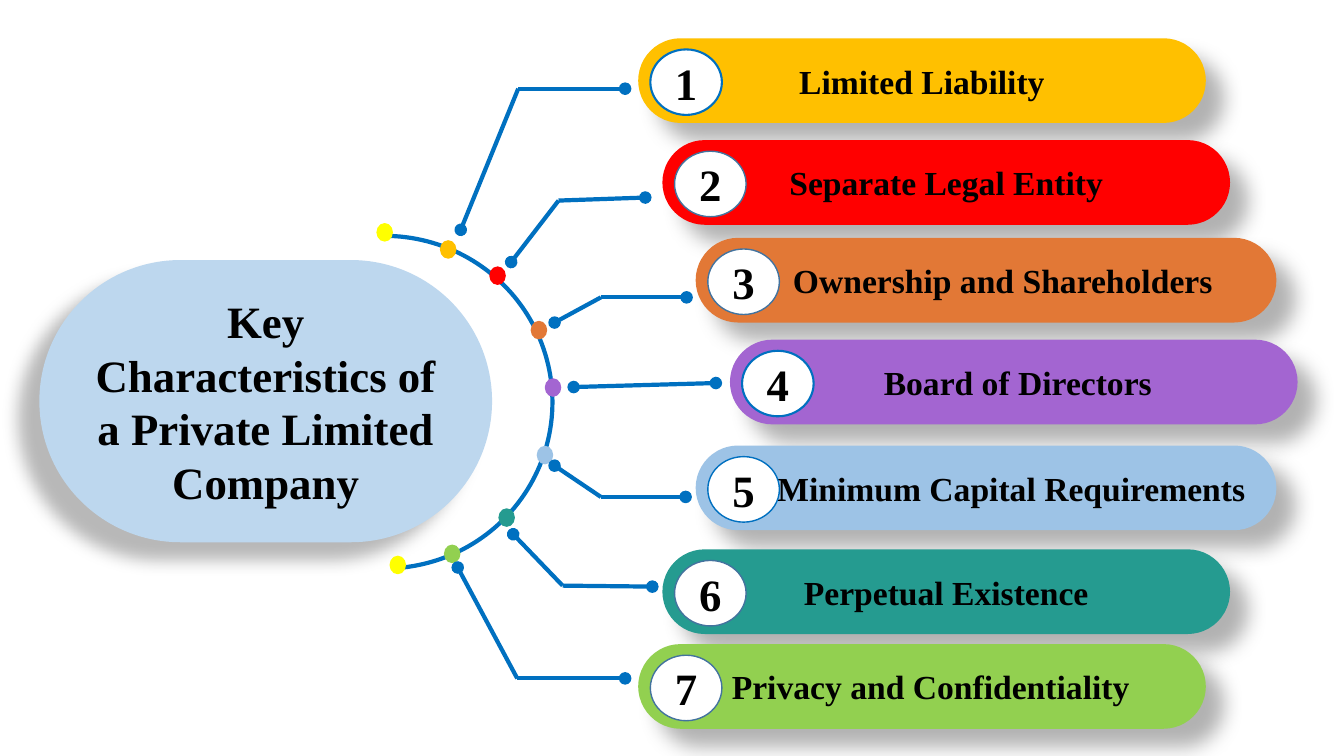
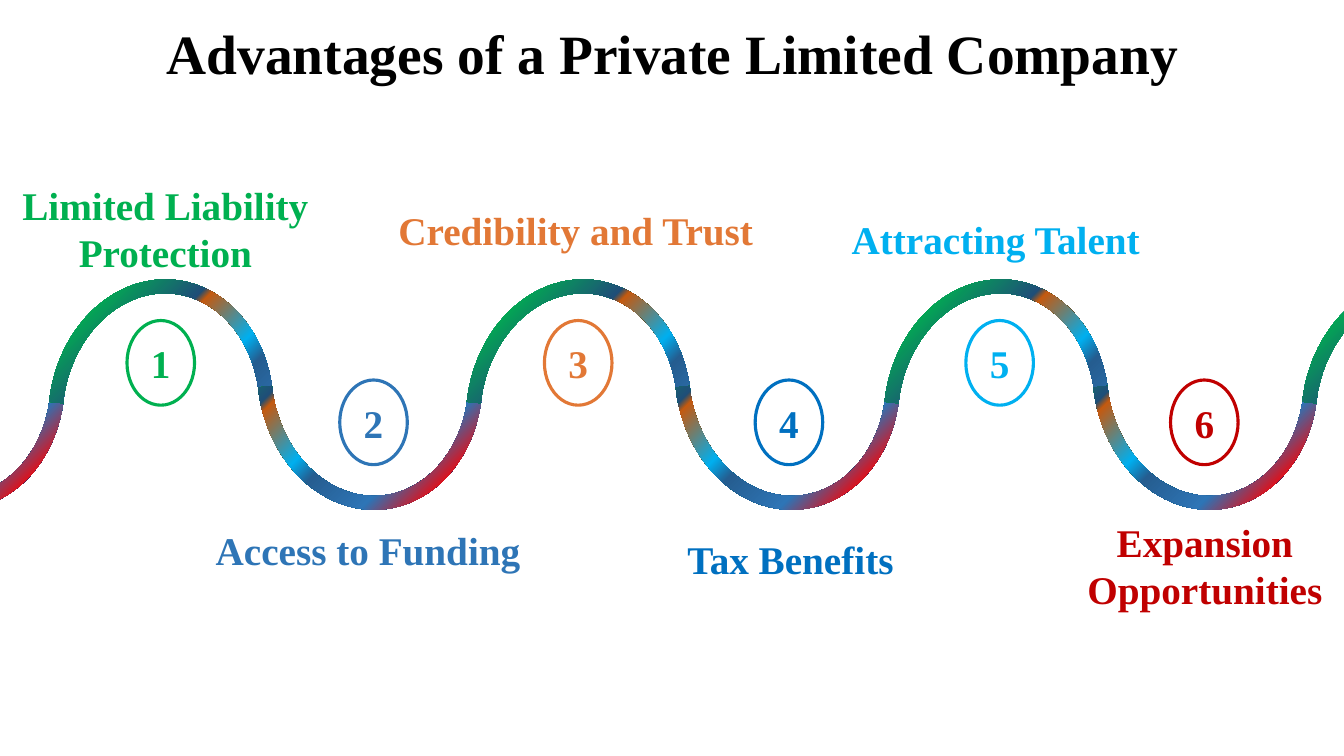
"""Build two slides on private limited companies: key characteristics and advantages."""
from lxml import etree
from pptx import Presentation
from pptx.dml.color import RGBColor
from pptx.enum import shapes, text
from pptx.oxml import ns
from pptx.util import Inches, Pt

FONT = "Times New Roman"
BLACK = RGBColor(0x00, 0x00, 0x00)
WHITE = RGBColor(0xFF, 0xFF, 0xFF)
BLUE = RGBColor(0x00, 0x70, 0xC0)
STEEL = RGBColor(0x43, 0x73, 0x9E)
PALE_BLUE = RGBColor(0xBD, 0xD7, 0xEE)
LIGHT_BLUE = RGBColor(0x9D, 0xC3, 0xE6)
MID_BLUE = RGBColor(0x2E, 0x75, 0xB6)
SKY = RGBColor(0x00, 0xB0, 0xF0)
YELLOW = RGBColor(0xFF, 0xFF, 0x00)
GOLD = RGBColor(0xFF, 0xC0, 0x00)
RED = RGBColor(0xFF, 0x00, 0x00)
DARK_RED = RGBColor(0xC0, 0x00, 0x00)
ORANGE = RGBColor(0xE2, 0x78, 0x36)
PURPLE = RGBColor(0xA3, 0x65, 0xD1)
TEAL = RGBColor(0x25, 0x9B, 0x90)
LIME = RGBColor(0x92, 0xD0, 0x50)
GREEN = RGBColor(0x00, 0xB0, 0x50)

WAVE_STOPS = [
    (0, RGBColor(0x59, 0x59, 0x59)), (15, RED), (27, MID_BLUE),
    (42, RGBColor(0x25, 0x5D, 0x90)), (48, SKY),
    (63, RGBColor(0xC5, 0x5A, 0x11)), (65, RGBColor(0x1F, 0x4E, 0x79)),
    (84, GREEN), (100, RGBColor(0xE1, 0xEB, 0xFB)),
]
PILL_SHADOW = (28, 11.8, 19.7, 141)
BAR_SHADOW = (30, 15, 18, 45)

DOTS = [
    (3.74, 2.22, YELLOW), (4.37, 2.39, GOLD), (4.86, 2.65, RED),
    (5.27, 3.19, ORANGE), (5.41, 3.76, PURPLE), (5.33, 4.43, LIGHT_BLUE),
    (4.95, 5.05, TEAL), (4.41, 5.41, LIME), (3.87, 5.52, YELLOW),
]
BENT_LEADERS = [
    ((5.14, 0.88), (4.57, 2.28), (6.2, 0.88)),
    ((5.54, 1.99), (5.07, 2.6), (6.4, 1.96)),
    ((5.96, 2.95), (5.5, 3.2), (6.81, 2.95)),
    ((5.96, 4.93), (5.5, 4.62), (6.8, 4.93)),
    ((5.58, 5.81), (5.09, 5.3), (6.47, 5.82)),
    ((5.13, 6.73), (4.54, 5.63), (6.2, 6.73)),
]
CHARACTERISTICS = [
    ("Limited Liability", 6.33, 0.38, 5.63, GOLD, 0, BLUE, 1.5),
    ("Separate Legal Entity", 6.57, 1.39, 5.63, RED, 0, STEEL, 1),
    ("Ownership and Shareholders", 6.9, 2.36, 5.76, ORANGE, 0.33, STEEL, 1),
    ("Board of Directors", 7.24, 3.37, 5.63, PURPLE, 0.08, BLUE, 1.5),
    ("Minimum Capital Requirements", 6.9, 4.42, 5.76, LIGHT_BLUE, 0.5, BLUE, 1),
    ("Perpetual Existence", 6.57, 5.45, 5.63, TEAL, 0, STEEL, 1),
    ("Privacy and Confidentiality", 6.33, 6.39, 5.63, LIME, 0.17, STEEL, 1),
]
ADVANTAGES = [
    ("Limited Liability Protection", GREEN, 1.26, (0, 1.75, 3.28, 1.04)),
    ("Access to Funding", MID_BLUE, 3.37, (2.02, 5.17, 3.26, 0.57)),
    ("Credibility and Trust", ORANGE, 5.4, (3.83, 2, 3.76, 0.57)),
    ("Tax Benefits", BLUE, 7.49, (6.66, 5.26, 2.36, 0.57)),
    ("Attracting Talent", SKY, 9.58, (8.33, 2.09, 3.09, 0.57)),
    ("Expansion Opportunities", DARK_RED, 11.61, (10.42, 5.09, 3.06, 1.04)),
]


def write(shape, content, size, color, indent=0.0):
    frame = shape.text_frame
    frame.word_wrap = True
    frame.margin_left = Inches(0.1 + indent)
    paragraph = frame.paragraphs[0]
    paragraph.alignment = text.PP_ALIGN.CENTER
    run = paragraph.add_run()
    run.text = content
    run.font.name = FONT
    run.font.size = Pt(size)
    run.font.bold = True
    run.font.color.rgb = color
    return paragraph


def add_label(slide, box, content, size, color):
    label = slide.shapes.add_textbox(*map(Inches, box))
    return label, write(label, content, size, color)


def add_preset(slide, kind, box, fill=None, line=None, width=1.0):
    shape = slide.shapes.add_shape(kind, *map(Inches, box))
    shape.shadow.inherit = False
    if fill is None:
        shape.fill.background()
    else:
        shape.fill.solid()
        shape.fill.fore_color.rgb = fill
    if line is None:
        shape.line.fill.background()
    else:
        shape.line.color.rgb = line
        shape.line.width = Pt(width)
    shape.text_frame.vertical_anchor = text.MSO_ANCHOR.MIDDLE
    return shape


def add_oval(slide, box, fill, line, width):
    return add_preset(slide, shapes.MSO_SHAPE.OVAL, box, fill, line, width)


def add_child(parent, tag, **attributes):
    child = etree.SubElement(parent, ns.qn(tag))
    for name, value in attributes.items():
        child.set(name, str(value))
    return child


def add_color(parent, color):
    return add_child(parent, "a:srgbClr", val=color)


def cast_shadow(shape, alpha, blur, distance, direction):
    effects = shape._element.spPr.find(ns.qn("a:effectLst"))
    shadow = add_child(effects, "a:outerShdw", blurRad=int(Pt(blur)), dist=int(Pt(distance)),
                       dir=direction * 60000, algn="ctr", rotWithShape=0)
    add_child(add_color(shadow, BLACK), "a:alpha", val=alpha * 1000)


def add_rounded_bar(slide, box, fill, shadow):
    bar = add_preset(slide, shapes.MSO_SHAPE.ROUNDED_RECTANGLE, box, fill)
    bar.adjustments[0] = 0.5
    cast_shadow(bar, *shadow)
    return bar


def add_leader(slide, start, end, ends=("a:tailEnd",)):
    points = [Inches(value) for value in (*start, *end)]
    leader = slide.shapes.add_connector(shapes.MSO_CONNECTOR.STRAIGHT, *points)
    leader.line.color.rgb = BLUE
    leader.line.width = Pt(3)
    for tag in ends:
        add_child(leader.line._get_or_add_ln(), tag, type="oval")
    add_child(leader._element.spPr, "a:effectLst")


def fill_with_wave_gradient(shape):
    properties = shape._element.spPr
    gradient = etree.Element(ns.qn("a:gradFill"), rotWithShape="1")
    stops = add_child(gradient, "a:gsLst")
    for position, color in WAVE_STOPS:
        add_color(add_child(stops, "a:gs", pos=position * 1000), color)
    radial = add_child(gradient, "a:path", path="circle")
    add_child(radial, "a:fillToRect", l=100000, t=100000)
    properties.replace(properties.find(ns.qn("a:noFill")), gradient)


def add_wave_arc(slide, left, is_crest):
    box = (left, 2.77 if is_crest else 2.39, 2.23, 2.67)
    arc = add_preset(slide, shapes.MSO_SHAPE.BLOCK_ARC, box)
    for index, value in enumerate((108, 206.741, 0.062)):
        arc.adjustments[index] = value
    arc.rotation = 6.1 if is_crest else 353.9
    if not is_crest:
        arc._element.spPr.xfrm.set("flipV", "1")
    fill_with_wave_gradient(arc)


def add_characteristic(slide, number, entry):
    name, left, top, width, fill, indent, border, border_width = entry
    bar = add_rounded_bar(slide, (left, top, width, 0.84), fill, BAR_SHADOW)
    write(bar, name, 24, BLACK, indent)
    badge = add_oval(slide, (left + 0.12, top + 0.11, 0.71, 0.65), WHITE, border, border_width)
    write(badge, str(number), 32, BLACK)


def build_characteristics(slide):
    arc = add_preset(slide, shapes.MSO_SHAPE.ARC, (2.15, 2.34, 3.33, 3.3), None, BLUE, 3)
    arc.adjustments[0] = 162
    arc.adjustments[1] = 52.192
    topic = add_rounded_bar(slide, (0.39, 2.58, 4.49, 2.8), PALE_BLUE, PILL_SHADOW)
    write(topic, "Key Characteristics of a Private Limited Company", 32, BLACK)
    for left, top, color in DOTS:
        add_oval(slide, (left, top, 0.15, 0.17), color, color, 1)
    for elbow, inner, outer in BENT_LEADERS:
        add_leader(slide, elbow, inner)
        add_leader(slide, elbow, outer)
    add_leader(slide, (5.69, 3.84), (7.1, 3.8), ("a:headEnd", "a:tailEnd"))
    for number, entry in enumerate(CHARACTERISTICS, 1):
        add_characteristic(slide, number, entry)


def build_advantages(slide):
    title, paragraph = add_label(slide, (0.92, 0.2, 11.5, 0.73),
                                 "Advantages of a Private Limited Company", 39.6, BLACK)
    title.text_frame.vertical_anchor = text.MSO_ANCHOR.MIDDLE
    paragraph.line_spacing = 0.9
    for index in range(8):
        add_wave_arc(slide, -1.59 + index * 14.5 / 7, index % 2 == 1)
    for number, (name, color, left, label_box) in enumerate(ADVANTAGES, 1):
        top = 3.18 if number % 2 else 3.77
        badge = add_oval(slide, (left, top, 0.67, 0.84), None, color, 2.25)
        write(badge, str(number), 28, color)
        add_label(slide, label_box, name, 28, color)


def main():
    presentation = Presentation()
    presentation.slide_width = Inches(13.33)
    presentation.slide_height = Inches(7.5)
    blank = presentation.slide_layouts[6]
    for build in (build_characteristics, build_advantages):
        build(presentation.slides.add_slide(blank))
    presentation.save("out.pptx")


if __name__ == "__main__":
    main()
